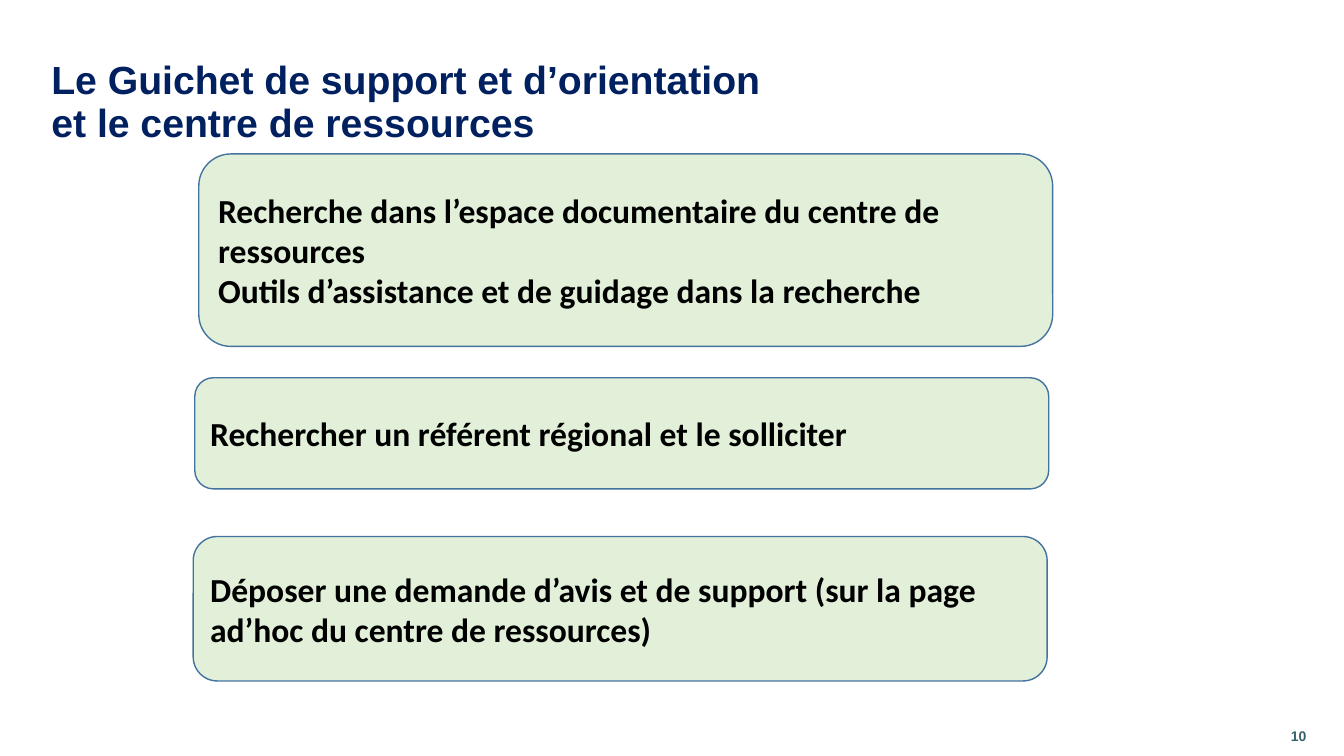
from pptx import Presentation
from pptx.dml.color import RGBColor
from pptx.enum.shapes import MSO_SHAPE
from pptx.enum.text import MSO_ANCHOR, MSO_AUTO_SIZE, PP_ALIGN
from pptx.util import Cm, Pt

COLORS = {
    "title": "002060",
    "card": "E2F0D9",
    "outline": "43739E",
    "text": "000000",
    "number": "36616C",
}

FORMATS = {
    "title": {"name": "Arial", "size": Pt(28), "bold": True},
    "text": {"name": "Calibri", "size": Pt(24), "bold": True},
    "number": {"name": "Arial", "size": Pt(10), "bold": True},
}

# Each card: left, top, width, height in cm, then its paragraphs
CARDS = [
    ((5.01, 3.88, 21.52, 4.85), [
        "Recherche dans l’espace documentaire du centre de ressources",
        "Outils d’assistance et de guidage dans la recherche",
    ]),
    ((4.91, 9.52, 21.52, 2.8), ["Rechercher un référent régional et le solliciter"]),
    ((4.87, 13.52, 21.52, 3.64), [
        "Déposer une demande d’avis et de support (sur la page ad’hoc du centre de ressources)",
    ]),
]


def color(name):
    return RGBColor.from_string(COLORS[name])


def write_text(shape, paragraphs, style, line_spacing=1.0):
    text_frame = shape.text_frame
    text_frame.text = "\n".join(paragraphs)
    frame_format = {
        "word_wrap": True,
        "auto_size": MSO_AUTO_SIZE.NONE,
        "vertical_anchor": MSO_ANCHOR.MIDDLE,
    }
    for attribute, value in frame_format.items():
        setattr(text_frame, attribute, value)
    for paragraph in text_frame.paragraphs:
        paragraph.alignment = PP_ALIGN.LEFT
        paragraph.line_spacing = line_spacing
        paragraph.space_before = Pt(0)
        for run in paragraph.runs:
            for attribute, value in FORMATS[style].items():
                setattr(run.font, attribute, value)
            run.font.color.rgb = color(style)


def place_title(slide, box, text):
    title = slide.shapes.title
    title.left, title.top, title.width, title.height = map(Cm, box)
    write_text(title, [text], "title", line_spacing=0.9)


def add_card(slide, box, paragraphs):
    card = slide.shapes.add_shape(MSO_SHAPE.ROUNDED_RECTANGLE, *map(Cm, box))
    card.shadow.inherit = False
    card.fill.solid()
    card.fill.fore_color.rgb = color("card")
    card.line.color.rgb = color("outline")
    card.line.width = Pt(1)
    write_text(card, paragraphs, "text")


def add_slide_number(slide, box, number):
    number_box = slide.shapes.add_textbox(*map(Cm, box))
    write_text(number_box, [number], "number")


def main():
    presentation = Presentation()
    presentation.slide_width, presentation.slide_height = Cm(33.87), Cm(19.05)
    slide = presentation.slides.add_slide(presentation.slide_layouts[5])

    # Title on two lines
    place_title(slide, (1.04, 1.98, 32.33, 1.25),
                "Le Guichet de support et d’orientation\vet le centre de ressources")

    # Three service cards
    for box, paragraphs in CARDS:
        add_card(slide, box, paragraphs)

    # Slide number
    add_slide_number(slide, (32.28, 18.03, 1.57, 1.02), "10")

    presentation.save("out.pptx")


if __name__ == "__main__":
    main()
